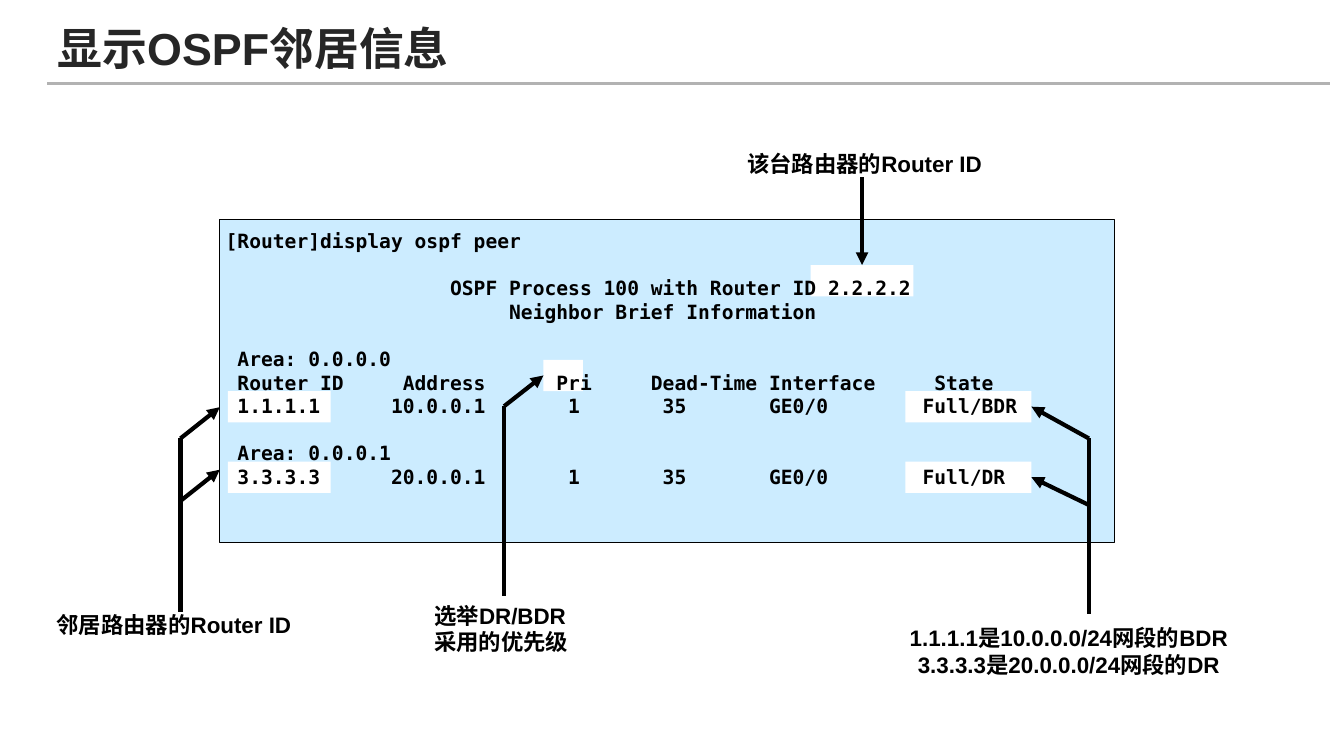
from dataclasses import dataclass

from lxml import etree
from pptx import Presentation
from pptx import util as u
from pptx.dml.color import RGBColor
from pptx.enum import shapes, text
from pptx.oxml import ns


@dataclass(frozen=True)
class Theme:
    ink: str = "000000"
    heading: str = "262626"
    rule: str = "B2B2B2"
    panel: str = "CCECFF"
    highlight: str = "FFFFFF"
    sans: str = "Arial"
    mono: str = "DejaVu Sans Mono"
    title_size: int = 32
    label_size: int = 16
    code_size: int = 14
    code_pitch: float = 16.86


@dataclass(frozen=True)
class Box:
    left: float
    top: float
    width: float
    height: float

    def inner(self, left, top, width, height):
        return Box(self.left + left, self.top + top, width, height)

    def point(self, across, down):
        return self.left + across, self.top + down

    def inches(self):
        return [u.Inches(n) for n in (self.left, self.top, self.width, self.height)]


THEME = Theme()
SIDES = {"top": 0, "left": 1, "right": 3}
TERMINAL_LINES = [
    "[Router]display ospf peer",
    "                   OSPF Process 100 with Router ID 2.2.2.2",
    "                        Neighbor Brief Information",
    " Area: 0.0.0.0",
    " Router ID     Address      Pri     Dead-Time Interface     State",
    " 1.1.1.1      10.0.0.1       1       35       GE0/0        Full/BDR",
    " Area: 0.0.0.1",
    " 3.3.3.3      20.0.0.1       1       35       GE0/0        Full/DR",
]
LINES_AFTER_GAP = (1, 3, 6)


def style_paragraph(para, size, font, color):
    for span in para.runs:
        span.font.size = u.Pt(size)
        span.font.name = font
        span.font.bold = True
        span.font.color.rgb = RGBColor.from_string(color)


def add_rectangle(page, box, fill, outline=None):
    shape = page.shapes.add_shape(shapes.MSO_SHAPE.RECTANGLE, *box.inches())
    shape.shadow.inherit = False
    shape.fill.solid()
    shape.fill.fore_color.rgb = RGBColor.from_string(fill)
    if outline:
        shape.line.color.rgb = RGBColor.from_string(outline)
        shape.line.width = u.Pt(0.75)
    else:
        shape.line.fill.background()
    return shape


def add_line(page, start, end, color=THEME.ink, width=3, arrow=False):
    ends = [u.Inches(n) for n in (*start, *end)]
    line = page.shapes.add_connector(shapes.MSO_CONNECTOR.STRAIGHT, *ends)
    line.line.color.rgb = RGBColor.from_string(color)
    line.line.width = u.Pt(width)
    if arrow:
        outline = line.line._get_or_add_ln()
        etree.SubElement(outline, ns.qn("a:tailEnd"), type="triangle")
    etree.SubElement(line._element.spPr, ns.qn("a:effectLst"))
    return line


def add_arrow_to(page, start, end, target, side):
    arrow = add_line(page, start, end, arrow=True)
    arrow.end_connect(target, SIDES[side])


def add_label(page, box, words, wrap=False):
    label = page.shapes.add_textbox(*box.inches())
    frame = label.text_frame
    frame.word_wrap = wrap
    frame.vertical_anchor = text.MSO_ANCHOR.TOP if wrap else text.MSO_ANCHOR.MIDDLE
    frame.text = words
    for para in frame.paragraphs:
        para.alignment = text.PP_ALIGN.LEFT if wrap else text.PP_ALIGN.CENTER
        style_paragraph(para, THEME.label_size, THEME.sans, THEME.ink)


def add_title(page, box):
    title = page.shapes.title
    title.left, title.top, title.width, title.height = box.inches()
    frame = title.text_frame
    frame.text = "显示OSPF邻居信息"
    frame.vertical_anchor = text.MSO_ANCHOR.MIDDLE
    frame.paragraphs[0].alignment = text.PP_ALIGN.LEFT
    style_paragraph(frame.paragraphs[0], THEME.title_size, THEME.sans, THEME.heading)
    add_line(page, box.point(0, 0.69), box.point(12.72, 0.69), THEME.rule, 2.25)


def add_terminal(page, box):
    add_rectangle(page, box, THEME.panel, THEME.ink)
    first_row, second_row = 1.7, 2.4
    spots = {
        "own_id": (5.86, 0.45, 1.02),
        "priority": (3.21, 1.39, 0.39),
        "first_id": (0.08, first_row, 1.02),
        "second_id": (0.08, second_row, 1.02),
        "first_state": (6.8, first_row, 1.25),
        "second_state": (6.8, second_row, 1.25),
    }
    highlights = {
        name: add_rectangle(page, box.inner(*spot, 0.31), THEME.highlight)
        for name, spot in spots.items()
    }
    screen = page.shapes.add_textbox(*box.inner(-0.04, 0.04, 9.23, 2.99).inches())
    frame = screen.text_frame
    frame.word_wrap = True
    frame.text = "\n".join(TERMINAL_LINES)
    for index, para in enumerate(frame.paragraphs):
        para.line_spacing = u.Pt(THEME.code_pitch)
        if index in LINES_AFTER_GAP:
            para.space_before = u.Pt(THEME.code_pitch)
        style_paragraph(para, THEME.code_size, THEME.mono, THEME.ink)
    return highlights


def add_callouts(page, box, highlights):
    add_label(page, box.inner(4.9, -0.75, 2.99, 0.39), "该台路由器的Router ID")
    add_arrow_to(page, box.point(6.37, -0.42), box.point(6.37, 0.45),
                 highlights["own_id"], "top")

    add_label(page, box.inner(-1.91, 3.82, 2.91, 0.39), "邻居路由器的Router ID")
    add_line(page, box.point(-0.39, 2.17), box.point(-0.39, 3.89))
    for down in (2.17, 2.79):
        add_line(page, box.point(-0.39, down), box.point(0, down - 0.31), arrow=True)

    add_label(page, box.inner(2.03, 3.74, 1.56, 0.64), "选举DR/BDR采用的优先级", wrap=True)
    add_line(page, box.point(2.82, 1.85), box.point(2.82, 3.73))
    add_arrow_to(page, box.point(2.82, 1.85), box.point(3.21, 1.54),
                 highlights["priority"], "left")

    add_label(page, box.inner(6.37, 3.96, 4.1, 0.63),
              "1.1.1.1是10.0.0.0/24网段的BDR\n3.3.3.3是20.0.0.0/24网段的DR")
    add_line(page, box.point(8.62, 2.17), box.point(8.62, 3.91))
    for name, down in (("first_state", 2.17), ("second_state", 2.83)):
        add_arrow_to(page, box.point(8.62, down), box.point(8.05, down - 0.29),
                     highlights[name], "right")


def main():
    deck = Presentation()
    deck.slide_width, deck.slide_height = u.Inches(13.33), u.Inches(7.5)
    page = deck.slides.add_slide(deck.slide_layouts[5])
    terminal = Box(2.18, 2.18, 8.87, 3.2)
    add_title(page, Box(0.47, 0.14, 11.02, 0.67))
    highlights = add_terminal(page, terminal)
    add_callouts(page, terminal, highlights)
    deck.save("out.pptx")


if __name__ == "__main__":
    main()
